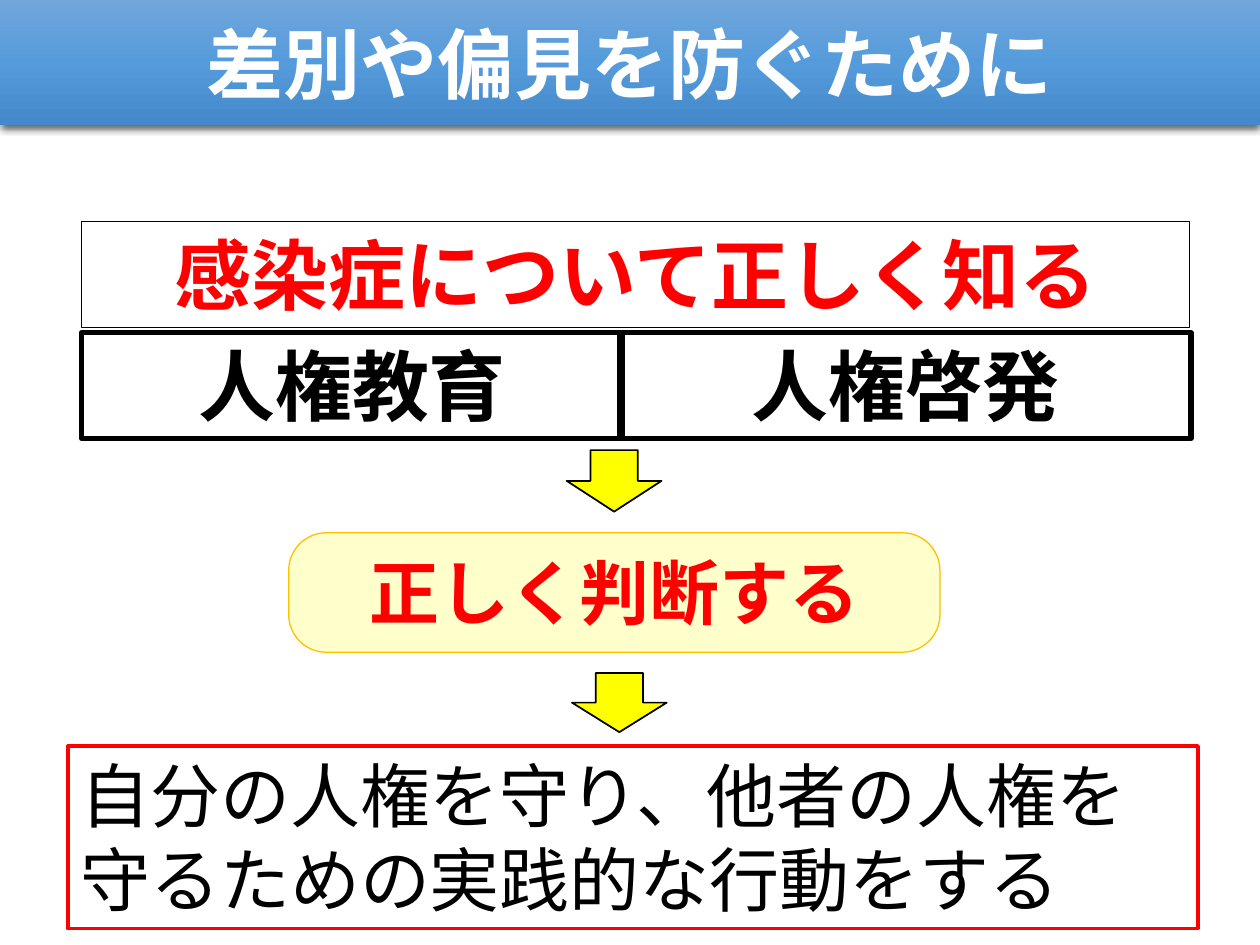
from lxml.etree import SubElement
from pptx import Presentation
from pptx.dml.color import RGBColor
from pptx.enum.shapes import MSO_SHAPE as Shape
from pptx.enum.text import MSO_ANCHOR as Anchor, MSO_AUTO_SIZE as AutoSize, PP_ALIGN as Align
from pptx.oxml.ns import qn
from pptx.util import Cm, Pt

FONT = "Noto Sans CJK JP"
COLORS = {
    "black": "000000", "white": "FFFFFF", "red": "FF0000", "yellow": "FFFF00",
    "cream": "FFFFCC", "gold": "FFC000",
    "band_top": "71A6DB", "band_middle": "559BDB", "band_bottom": "448ACA",
}
BAND_STOPS = [(0, "band_top"), (50, "band_middle"), (100, "band_bottom")]

TITLE = "差別や偏見を防ぐために"
# text, (left, top, width, height) in cm, text colour, line colour, line width
HEADING_BOXES = [
    ("人権教育", (1.65, 6.71, 10.9, 2.13), "black", "black", 3),
    ("人権啓発", (12.5, 6.71, 11.51, 2.13), "black", "black", 3),
    ("感染症について正しく知る", (1.65, 4.47, 22.33, 2.13), "red", "black", 0.75),
]
JUDGEMENT = ("正しく判断する", (5.82, 10.74, 13.13, 2.41))
ACTION = ("自分の人権を守り、他者の人権を守るための実践的な行動をする",
          (1.37, 15.04, 22.78, 3.68))
# left, top, width, height in cm before the quarter turn
ARROWS = [(11.76, 8.74, 1.24, 1.91), (11.89, 13.21, 1.19, 1.91)]


def rgb(name):
    return RGBColor.from_string(COLORS[name])


def add_box(slide, preset, place, fill=None, line=None, width=1):
    box = slide.shapes.add_shape(preset, *map(Cm, place))
    box.shadow.inherit = False
    if fill:
        box.fill.solid()
        box.fill.fore_color.rgb = rgb(fill)
    else:
        box.fill.background()
    if line:
        box.line.color.rgb = rgb(line)
        box.line.width = Pt(width)
    else:
        box.line.fill.background()
    return box


def write(box, text, size, color, bold=True, align=Align.CENTER,
          anchor=Anchor.TOP, fit=AutoSize.SHAPE_TO_FIT_TEXT):
    frame = box.text_frame
    frame.word_wrap = True
    frame.auto_size = fit
    frame.vertical_anchor = anchor
    paragraph = frame.paragraphs[0]
    paragraph.alignment = align
    run = paragraph.add_run()
    run.text = text
    run.font.name = FONT
    run.font.size = Pt(size)
    run.font.bold = bold
    run.font.color.rgb = rgb(color)
    SubElement(run.font._element, qn("a:ea"), typeface=FONT)


def shade_band(band):
    """Give the title band its three-stop gradient and soft lower shadow."""
    band.fill.gradient()
    band.fill.gradient_angle = 270
    stops = band._element.spPr.find(qn("a:gradFill")).find(qn("a:gsLst"))
    for stop in list(stops):
        stops.remove(stop)
    for percent, name in BAND_STOPS:
        stop = SubElement(stops, qn("a:gs"), pos=str(percent * 1000))
        SubElement(stop, qn("a:srgbClr"), val=COLORS[name])
    effects = band._element.spPr.find(qn("a:effectLst"))
    shadow = SubElement(effects, qn("a:outerShdw"), blurRad=str(Pt(4.5)),
                        dist=str(Pt(1.5)), dir="5400000", algn="ctr", rotWithShape="0")
    shade = SubElement(shadow, qn("a:srgbClr"), val=COLORS["black"])
    SubElement(shade, qn("a:alpha"), val="63000")


def main():
    deck = Presentation()
    deck.slide_width, deck.slide_height = Cm(25.4), Cm(19.05)
    slide = deck.slides.add_slide(deck.slide_layouts[6])

    for text, place, color, line, width in HEADING_BOXES:
        write(add_box(slide, Shape.RECTANGLE, place, line=line, width=width),
              text, 44, color)

    text, place = ACTION
    action = add_box(slide, Shape.RECTANGLE, place, line="red", width=2.25)
    write(action, text, 40, "black", bold=False, align=Align.LEFT)

    text, place = JUDGEMENT
    judgement = add_box(slide, Shape.ROUNDED_RECTANGLE, place, "cream", "gold", 0.75)
    judgement.adjustments[0] = 0.315
    write(judgement, text, 40, "red")

    for place in ARROWS:
        arrow = add_box(slide, Shape.RIGHT_ARROW, place, "yellow", "black")
        arrow.rotation = 90

    band = add_box(slide, Shape.RECTANGLE, (0, 0, 25.4, 2.52))
    shade_band(band)
    write(band, TITLE, 44, "white", anchor=Anchor.MIDDLE, fit=AutoSize.NONE)

    deck.save("out.pptx")


if __name__ == "__main__":
    main()
